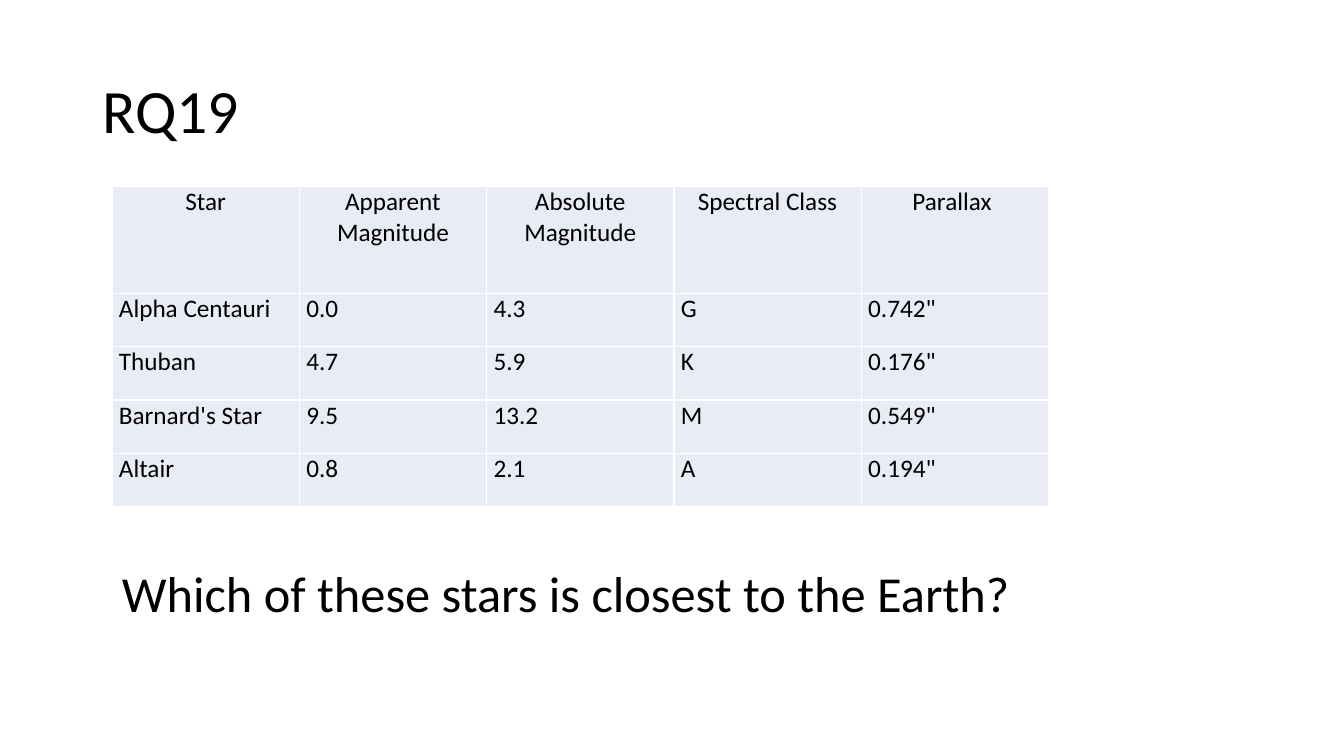
from lxml import etree
from pptx import Presentation
from pptx.dml.color import RGBColor
from pptx.enum.text import MSO_ANCHOR, MSO_AUTO_SIZE, PP_ALIGN
from pptx.oxml.ns import qn
from pptx.util import Pt

LEFT, CENTER = PP_ALIGN.LEFT, PP_ALIGN.CENTER
MIDDLE = MSO_ANCHOR.MIDDLE
GROW = MSO_AUTO_SIZE.SHAPE_TO_FIT_TEXT

TITLE = "RQ19"
QUESTION = "Which of these stars is closest to the Earth?"
STARS = [
    ("Star", "Apparent Magnitude", "Absolute Magnitude", "Spectral Class", "Parallax "),
    ("Alpha Centauri", "0.0", "4.3", "G", '0.742"'),
    ("Thuban", "4.7", "5.9", "K", '0.176"'),
    ("Barnard's Star", "9.5", "13.2", "M", '0.549"'),
    ("Altair", "0.8", "2.1", "A", '0.194"'),
]
COLORS = {"text": "000000", "cell": "E9EBF5", "border": "FFFFFF"}
FONT = "Calibri"

TABLE_LEFT, TABLE_TOP = 80, 133.2
COL_WIDTH, ROW_HEIGHT = 133.8, 38.15
HEADER_HEIGHT = 2 * ROW_HEIGHT
CELL_INSET = 5


def color(name):
    return RGBColor.from_string(COLORS[name])


def place(sp, left, top, width, height):
    sp.left, sp.top, sp.width, sp.height = Pt(left), Pt(top), Pt(width), Pt(height)


def style(p, size, align=LEFT):
    p.alignment = align
    p.font.name = FONT
    p.font.size = Pt(size)
    p.font.bold = False
    p.font.color.rgb = color("text")


def add_borders(cell):
    tc_pr = cell._tc.get_or_add_tcPr()
    for i, side in enumerate(("lnL", "lnR", "lnT", "lnB")):
        ln = etree.Element(qn(f"a:{side}"), w=str(Pt(1)))
        fill = etree.SubElement(ln, qn("a:solidFill"))
        etree.SubElement(fill, qn("a:srgbClr"), val=COLORS["border"])
        tc_pr.insert(i, ln)


def fill_cell(cell, text, align):
    cell.text = text
    cell.margin_left = cell.margin_right = Pt(CELL_INSET)
    cell.margin_top = cell.margin_bottom = 0
    cell.fill.solid()
    cell.fill.fore_color.rgb = color("cell")
    style(cell.text_frame.paragraphs[0], 18, align)
    add_borders(cell)


def add_star_table(slide):
    n_rows, n_cols = len(STARS), len(STARS[0])
    height = HEADER_HEIGHT + (n_rows - 1) * ROW_HEIGHT
    table = slide.shapes.add_table(
        n_rows, n_cols, Pt(TABLE_LEFT), Pt(TABLE_TOP),
        Pt(n_cols * COL_WIDTH), Pt(height)).table
    table.horz_banding = False
    for col in table.columns:
        col.width = Pt(COL_WIDTH)
    for r, values in enumerate(STARS):
        table.rows[r].height = Pt(ROW_HEIGHT if r else HEADER_HEIGHT)
        for c, text in enumerate(values):
            fill_cell(table.cell(r, c), text, LEFT if r else CENTER)


def main():
    prs = Presentation()
    prs.slide_width, prs.slide_height = Pt(960), Pt(540)
    slide = prs.slides.add_slide(prs.slide_layouts[5])

    title = slide.shapes.title
    place(title, 66, 28.75, 828, 104.4)
    title.text_frame.text = TITLE
    title.text_frame.vertical_anchor = MIDDLE
    p = title.text_frame.paragraphs[0]
    p.line_spacing = 0.9
    style(p, 44)

    add_star_table(slide)

    question = slide.shapes.add_textbox(Pt(TABLE_LEFT), Pt(398.2), Pt(697.7), Pt(51))
    tf = question.text_frame
    tf.word_wrap = True
    tf.auto_size = GROW
    tf.text = QUESTION
    style(tf.paragraphs[0], 36)

    prs.save("out.pptx")


if __name__ == "__main__":
    main()
